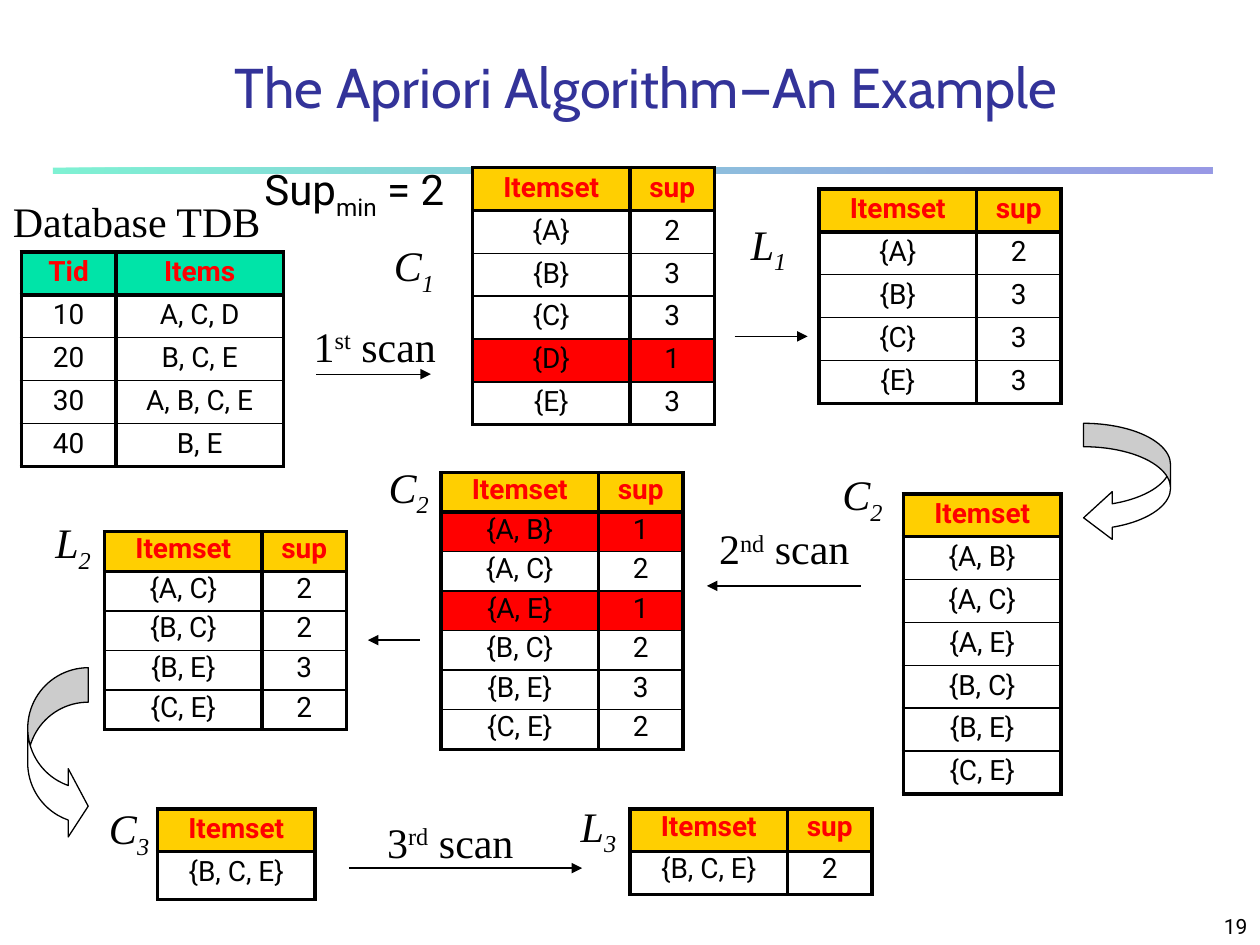
from lxml.etree import SubElement
from pptx import Presentation
from pptx.dml.color import RGBColor
from pptx.enum.shapes import MSO_CONNECTOR, MSO_SHAPE
from pptx.enum.text import MSO_ANCHOR, MSO_AUTO_SIZE, PP_ALIGN
from pptx.oxml.ns import qn
from pptx.util import Inches, Pt

BLACK, WHITE, RED = "000000", "FFFFFF", "FF0000"
GREEN, YELLOW, INDIGO = "00E4A8", "FFCF01", "333399"
SERIF, SANS, DISPLAY = "Times New Roman", "Roboto", "Cabin"
THICK, THIN = 2.25, 1
SUPER, SUB = 30, -25
ITEMSET_WIDTHS = [1.25, 0.67]


def rgb(value):
    return RGBColor.from_string(value)


def set_attributes(target, formats):
    for key, value in formats.items():
        setattr(target, key, value)


def add_run(paragraph, text, size, font, color=BLACK, baseline=0, **formats):
    run = paragraph.add_run()
    run.text = text
    set_attributes(run.font, {"size": Pt(size), "name": font, **formats})
    run.font.color.rgb = rgb(color)
    if baseline:
        run.font._element.set("baseline", str(baseline * 1000))


def add_text(slide, box, parts, size=24, font=SERIF, color=BLACK,
             align=PP_ALIGN.CENTER, anchor=MSO_ANCHOR.MIDDLE, wrap=False,
             grow=True, **formats):
    """Add a one-line text box; parts are (text, baseline) pairs."""
    frame = slide.shapes.add_textbox(*map(Inches, box)).text_frame
    set_attributes(frame, {
        "word_wrap": wrap,
        "vertical_anchor": anchor,
        "auto_size": MSO_AUTO_SIZE.SHAPE_TO_FIT_TEXT if grow else MSO_AUTO_SIZE.NONE,
    })
    paragraph = frame.paragraphs[0]
    paragraph.alignment = align
    for text, baseline in parts:
        add_run(paragraph, text, size, font, color, baseline, **formats)


def add_set_label(slide, left, top, letter, index):
    width = 0.53 if letter == "C" else 0.5
    add_text(slide, (left, top, width, 0.5), [(letter, 0), (index, SUB)], italic=True)


def add_scan_label(slide, left, top, width, number, ending):
    add_text(slide, (left, top, width, 0.5),
             [(number, 0), (ending, SUPER), (" scan", 0)])


def add_arrow(slide, start, end, y):
    arrow = slide.shapes.add_connector(
        MSO_CONNECTOR.STRAIGHT, *map(Inches, (start, y, end, y)))
    arrow.line.color.rgb = rgb(BLACK)
    arrow.line.width = Pt(0.75)
    SubElement(arrow.line._get_or_add_ln(), qn("a:tailEnd"), type="triangle")
    SubElement(arrow._element.spPr, qn("a:effectLst"))


def add_curved_arrow(slide, preset, box, adjustments):
    arrow = slide.shapes.add_shape(preset, *map(Inches, box))
    arrow.shadow.inherit = False
    for index, value in enumerate(adjustments):
        arrow.adjustments[index] = value
    arrow.fill.solid()
    arrow.fill.fore_color.rgb = rgb(WHITE)
    arrow.line.color.rgb = rgb(BLACK)
    arrow.line.width = Pt(0.75)


def add_title_rule(slide):
    rule = slide.shapes.add_shape(
        MSO_SHAPE.RECTANGLE, *map(Inches, (0.42, 1.33, 9.2, 0.05)))
    rule.shadow.inherit = False
    rule.line.fill.background()
    rule.fill.gradient()
    rule.fill.gradient_angle = 0
    for stop, color in zip(rule.fill.gradient_stops, (GREEN, "3333CC")):
        stop.color.rgb = rgb(color)
    for color_node in rule._element.spPr.iter(qn("a:srgbClr")):
        SubElement(color_node, qn("a:alpha"), val="50000")


def set_borders(cell, top, bottom):
    properties = cell._tc.get_or_add_tcPr()
    widths = {"lnL": THICK, "lnR": THICK, "lnT": top, "lnB": bottom}
    for side, width in widths.items():
        line = SubElement(properties, qn(f"a:{side}"), w=str(Pt(width)))
        fill = SubElement(line, qn("a:solidFill"))
        SubElement(fill, qn("a:srgbClr"), val=BLACK)


def fill_cell(cell, text, fill, line_spacing, is_header):
    if fill:
        cell.fill.solid()
        cell.fill.fore_color.rgb = rgb(fill)
    else:
        cell.fill.background()
    set_attributes(cell, {"margin_left": Inches(0.1), "margin_right": Inches(0.1),
                          "margin_top": Inches(0.05), "margin_bottom": Inches(0.05)})
    paragraph = cell.text_frame.paragraphs[0]
    set_attributes(paragraph, {"alignment": PP_ALIGN.CENTER,
                               "line_spacing": line_spacing})
    before = SubElement(paragraph._p.get_or_add_pPr(), qn("a:spcBef"))
    SubElement(before, qn("a:spcPct"), val="20000")
    add_run(paragraph, text, 16, SANS, RED if is_header else BLACK, bold=is_header)


def add_grid(slide, left, top, rows, widths=ITEMSET_WIDTHS, height=0.34,
             last_height=None, line_spacing=0.9, header_fill=YELLOW, pruned=()):
    """Add a table; pruned lists the itemsets whose rows are marked red."""
    heights = [height] * (len(rows) - 1) + [last_height or height]
    table = slide.shapes.add_table(
        len(rows), len(widths),
        *map(Inches, (left, top, sum(widths), sum(heights)))).table
    table.first_row = table.horz_banding = False
    for column, width in zip(table.columns, widths):
        column.width = Inches(width)
    last = len(rows) - 1
    for index, values in enumerate(rows):
        table.rows[index].height = Inches(heights[index])
        is_header = index == 0
        fill = header_fill if is_header else RED if values[0] in pruned else None
        for column, text in enumerate(values):
            cell = table.cell(index, column)
            set_borders(cell, THICK if index <= 1 else THIN,
                        THICK if index in (0, last) else THIN)
            fill_cell(cell, text, fill, line_spacing, is_header)


def with_support(**supports):
    """Turn A=2, AB=1 into a header row and rows of itemset and support."""
    return [("Itemset", "sup")] + [
        ("{" + ", ".join(items) + "}", str(count)) for items, count in supports.items()]


def itemsets_only(*itemsets):
    return [row[:1] for row in with_support(**dict.fromkeys(itemsets, 0))]


def add_tables(slide):
    transactions = [("Tid", "Items"), ("10", "A, C, D"), ("20", "B, C, E"),
                    ("30", "A, B, C, E"), ("40", "B, E")]
    add_grid(slide, 0.17, 2, transactions, [0.75, 1.33], header_fill=GREEN)
    add_grid(slide, 3.75, 1.33, with_support(A=2, B=3, C=3, D=1, E=3), pruned=["{D}"])
    add_grid(slide, 6.5, 1.5, with_support(A=2, B=3, C=3, E=3))
    add_grid(slide, 7.17, 3.92, itemsets_only("AB", "AC", "AE", "BC", "BE", "CE"), [1.25])
    add_grid(slide, 3.5, 3.75, with_support(AB=1, AC=2, AE=1, BC=2, BE=3, CE=2),
             height=0.313, line_spacing=0.8, pruned=["{A, B}", "{A, E}"])
    add_grid(slide, 0.83, 4.22, with_support(AC=2, BC=2, BE=3, CE=2),
             height=0.313, line_spacing=0.8)
    add_grid(slide, 1.25, 6.42, itemsets_only("BCE"), [1.25], last_height=0.38)
    add_grid(slide, 5, 6.42, with_support(BCE=2), line_spacing=0.8)


def main():
    presentation = Presentation()
    presentation.slide_width, presentation.slide_height = Inches(10), Inches(7.5)
    slide = presentation.slides.add_slide(presentation.slide_layouts[6])

    add_title_rule(slide)
    add_text(slide, (7.92, 7.08, 2.08, 0.42), [("19", 0)], 12, SANS,
             align=PP_ALIGN.RIGHT, anchor=MSO_ANCHOR.BOTTOM, wrap=True, grow=False)
    add_text(slide, (0.92, 0.33, 8.52, 0.67), [("The Apriori Algorithm—An Example ", 0)],
             32, DISPLAY, INDIGO, anchor=MSO_ANCHOR.BOTTOM, wrap=True, grow=False)
    add_text(slide, (0, 1.5, 2.17, 0.5), [("Database TDB", 0)])

    for label in [(3.02, 1.88, "C", "1"), (5.85, 1.71, "L", "1"), (0.33, 4.08, "L", "2"),
                  (2.98, 3.64, "C", "2"), (6.58, 3.7, "C", "2"), (0.76, 6.35, "C", "3"),
                  (4.5, 6.33, "L", "3")]:
        add_set_label(slide, *label)
    for scan in [(2.38, 2.49, 1.19, "1", "st"), (5.59, 4.1, 1.27, "2", "nd"),
                 (2.96, 6.43, 1.23, "3", "rd")]:
        add_scan_label(slide, *scan)
    for step in [(2.51, 3.42, 2.97), (6.83, 5.61, 4.65), (2.77, 4.62, 6.89),
                 (5.83, 6.41, 2.67), (3.33, 2.92, 5.08)]:
        add_arrow(slide, *step)
    add_curved_arrow(slide, MSO_SHAPE.CURVED_LEFT_ARROW, (8.6, 3.36, 0.69, 0.94),
                     (0.27, 0.55, 0.33))
    add_curved_arrow(slide, MSO_SHAPE.CURVED_RIGHT_ARROW, (0.22, 5.3, 0.48, 1.37),
                     (0.57, 1.13, 0.33))

    add_tables(slide)
    add_text(slide, (2, 1.25, 1.92, 0.5), [("Sup", 0), ("min", SUB), (" = 2", 0)],
             font=SANS, align=PP_ALIGN.LEFT, anchor=MSO_ANCHOR.TOP, wrap=True)
    presentation.save("out.pptx")


if __name__ == "__main__":
    main()
